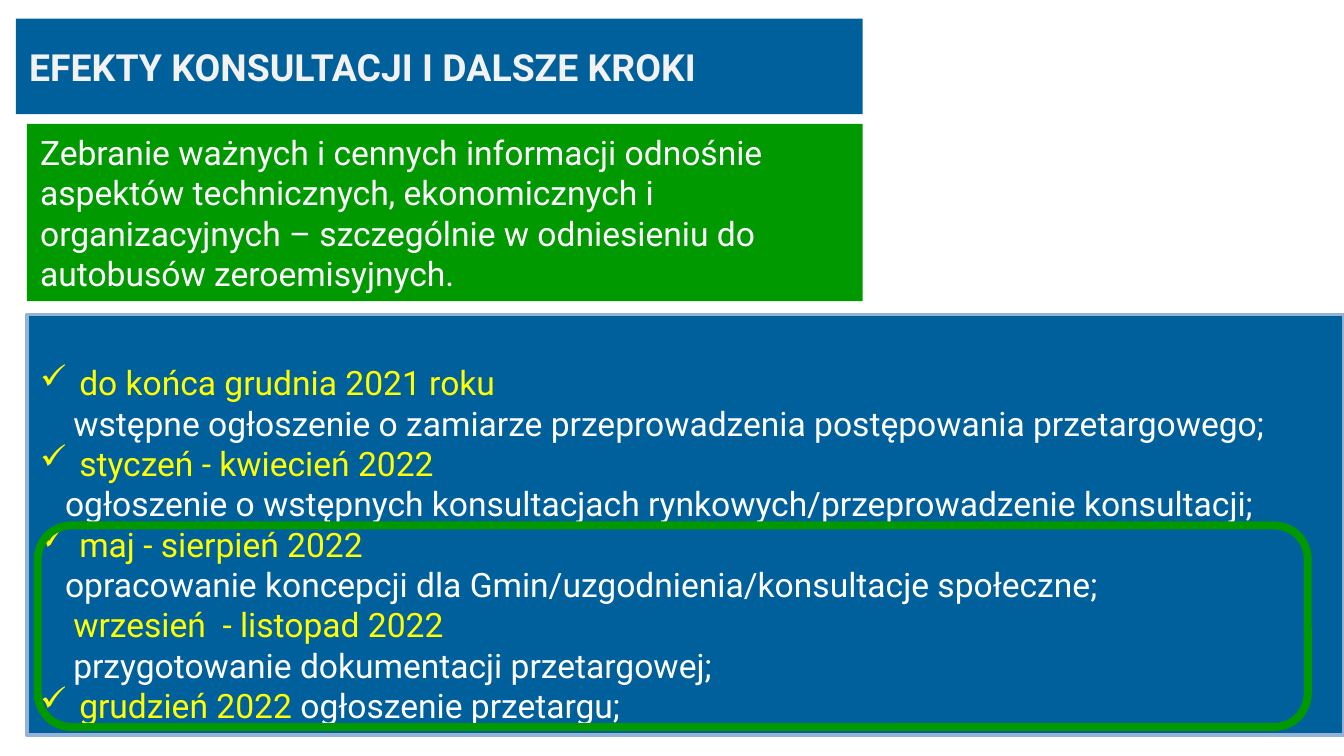
"""Builds the slide on consultation results and next steps."""
from dataclasses import dataclass

from lxml.etree import SubElement
from pptx import Presentation
from pptx.dml.color import RGBColor
from pptx.enum.shapes import MSO_SHAPE
from pptx.enum.text import MSO_ANCHOR, PP_ALIGN
from pptx.oxml.ns import qn
from pptx.util import Pt

BLUE, GREEN, PALE_BLUE = "00609B", "009900", "95B3D7"
YELLOW, WHITE, LIGHT = "FFFF00", "FFFFFF", "F2F2F2"
BODY = {"name": "Roboto", "size": Pt(18)}
TITLE = {"name": "Roboto", "size": Pt(20), "bold": True}


@dataclass
class Box:
    left: float
    top: float
    width: float
    height: float
    fill: str = ""
    line: str = ""
    weight: float = 0
    kind: MSO_SHAPE = MSO_SHAPE.RECTANGLE


@dataclass
class Line:
    runs: list[tuple[str, str]]
    indent: float = 0
    bullet: str = ""


TITLE_BAR = Box(8.6, 10, 453.6, 51.2, BLUE)
SUMMARY = Box(14.4, 66.3, 447.8, 95, GREEN)
SCHEDULE = Box(14.4, 168.5, 705.6, 225.4, BLUE, PALE_BLUE, 2)
HIGHLIGHT = Box(20.2, 281.5, 680.4, 108, "", GREEN, 4.25, MSO_SHAPE.ROUNDED_RECTANGLE)

HEADING = [Line([("EFEKTY KONSULTACJI I DALSZE KROKI", LIGHT)])]
FINDINGS = [Line([("Zebranie ważnych i cennych informacji odnośnie aspektów technicznych, "
                   "ekonomicznych i organizacyjnych – szczególnie w odniesieniu do "
                   "autobusów zeroemisyjnych.", WHITE)])]
STEPS = [
    Line([("do końca grudnia 2021 roku", YELLOW)], 21, "✓"),
    Line([("wstępne ogłoszenie o zamiarze przeprowadzenia postępowania przetargowego;", WHITE)], 17.8),
    Line([("styczeń - kwiecień 2022", YELLOW)], 21, "✓"),
    Line([("ogłoszenie o wstępnych konsultacjach rynkowych/przeprowadzenie konsultacji;", WHITE)], 13.4),
    Line([("maj - sierpień 2022", YELLOW)], 21, "✓"),
    Line([("opracowanie koncepcji dla Gmin/uzgodnienia/konsultacje społeczne;", WHITE)], 13.4),
    Line([("wrzesień  - listopad 2022", YELLOW)], 17.8),
    Line([("przygotowanie dokumentacji przetargowej;", WHITE)], 17.8),
    Line([("grudzień 2022", YELLOW), (" ogłoszenie przetargu;", WHITE)], 21, "✓"),
]


def color(target, value: str) -> None:
    """Set the RGB colour of a fill, line or font from a hex string."""
    target.rgb = RGBColor.from_string(value)


def draw_box(s, box: Box):
    """Add a box with its fill and outline and return the shape."""
    sp = s.shapes.add_shape(box.kind, *map(Pt, (box.left, box.top, box.width, box.height)))
    sp.shadow.inherit = False
    if box.fill:
        sp.fill.solid()
        color(sp.fill.fore_color, box.fill)
    else:
        sp.fill.background()
    if box.line:
        color(sp.line.color, box.line)
        sp.line.width = Pt(box.weight)
    else:
        sp.line.fill.background()
    return sp


def indent_line(p, line: Line) -> None:
    """Indent a paragraph, hanging its bullet when it has one."""
    pPr = p._p.get_or_add_pPr()
    pPr.set("marL", str(Pt(line.indent)))
    pPr.set("indent", str(-Pt(line.indent) if line.bullet else 0))
    if line.bullet:
        SubElement(pPr, qn("a:buChar")).set("char", line.bullet)


def write(sp, lines: list[Line], font: dict, frame: dict) -> None:
    """Fill a shape with left-aligned lines of coloured runs."""
    tf = sp.text_frame
    for name, value in frame.items():
        setattr(tf, name, value)
    for i, line in enumerate(lines):
        p = tf.paragraphs[0] if i == 0 else tf.add_paragraph()
        p.alignment = PP_ALIGN.LEFT
        indent_line(p, line)
        for text, hue in line.runs:
            r = p.add_run()
            r.text = text
            for name, value in font.items():
                setattr(r.font, name, value)
            color(r.font.color, hue)


def main() -> None:
    """Build and save the slide."""
    prs = Presentation()
    prs.slide_width, prs.slide_height = Pt(720), Pt(405)
    s = prs.slides.add_slide(prs.slide_layouts[6])
    middle = {"word_wrap": True, "vertical_anchor": MSO_ANCHOR.MIDDLE}
    top = {"word_wrap": True, "vertical_anchor": MSO_ANCHOR.TOP, "margin_top": Pt(25.6)}
    write(draw_box(s, SCHEDULE), STEPS, BODY, top)
    write(draw_box(s, TITLE_BAR), HEADING, TITLE, middle)
    write(draw_box(s, SUMMARY), FINDINGS, BODY, middle)
    draw_box(s, HIGHLIGHT)
    prs.save("out.pptx")


if __name__ == "__main__":
    main()
